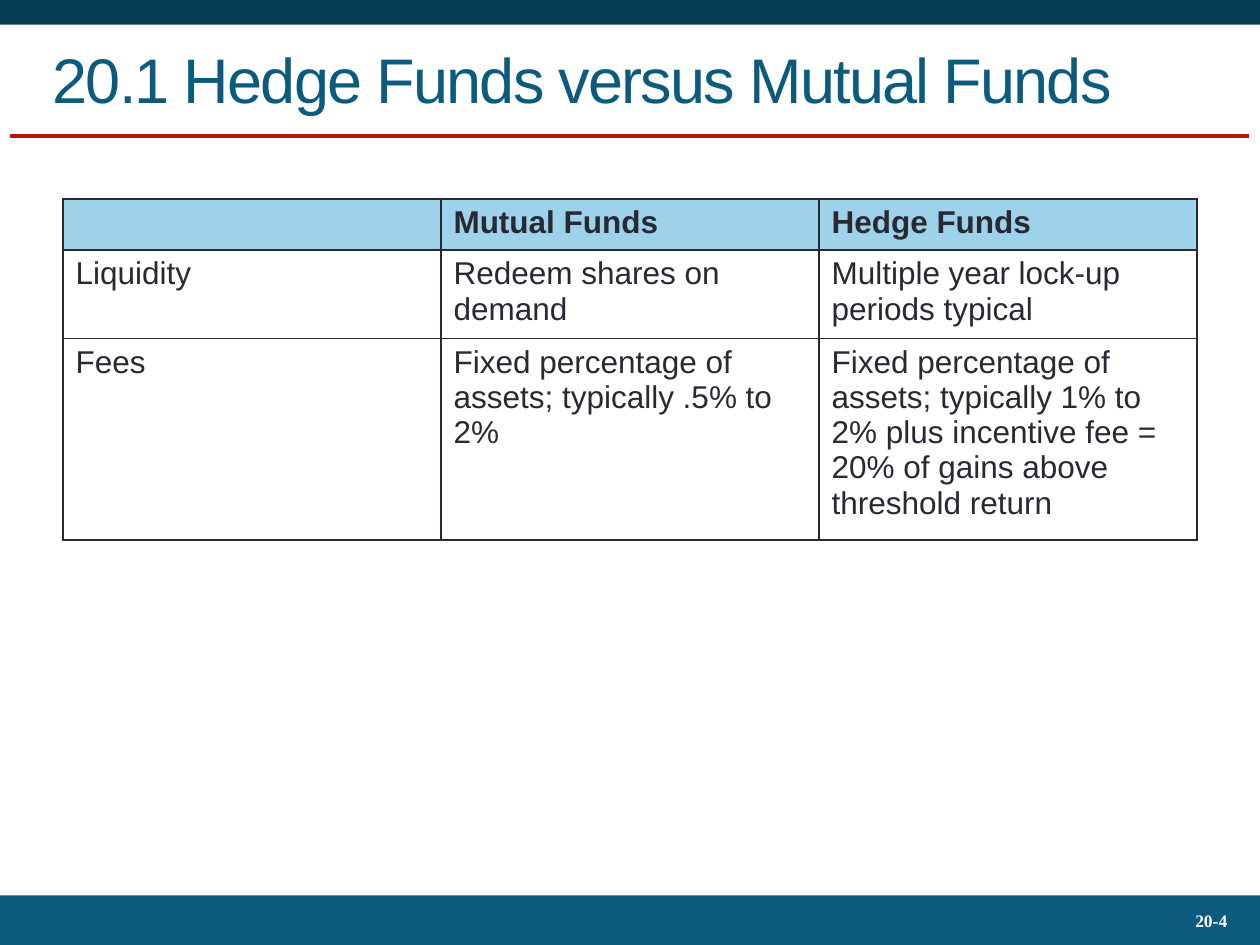
from dataclasses import dataclass

from lxml.etree import SubElement
from pptx import Presentation
from pptx.dml.color import RGBColor
from pptx.enum.shapes import MSO_CONNECTOR as Connector, MSO_SHAPE as Preset
from pptx.enum.text import MSO_ANCHOR as Anchor, PP_ALIGN as Align
from pptx.oxml.ns import qn
from pptx.util import Cm, Pt

WIDTH, HEIGHT = 25.4, 19.05


@dataclass(frozen=True)
class Theme:
    navy: str = "073D55"
    teal: str = "0B5B7F"
    red: str = "BD130F"
    sky: str = "9ED1EA"
    ink: str = "292934"
    white: str = "FFFFFF"
    sans: str = "Arial"
    serif: str = "Times New Roman"
    title_size: float = 36
    table_size: float = 18
    number_size: float = 10


class PageBuilder:
    def __init__(self, page, theme):
        self.page = page
        self.theme = theme

    def style(self, para, size, color, font, bold=False, spacing=None):
        for span in para.runs:
            span.font.size = Pt(size)
            span.font.name = font
            span.font.bold = bold
            span.font.color.rgb = RGBColor.from_string(color)
            if spacing is not None:
                span._r.get_or_add_rPr().set("spc", str(int(spacing * 100)))

    def band(self, top, height, color):
        bar = self.page.shapes.add_shape(
            Preset.RECTANGLE, 0, Cm(top), Cm(WIDTH), Cm(height))
        bar.shadow.inherit = False
        bar.fill.solid()
        bar.fill.fore_color.rgb = RGBColor.from_string(color)
        bar.line.fill.background()

    def rule(self, left, right, y, color, weight):
        line = self.page.shapes.add_connector(
            Connector.STRAIGHT, Cm(left), Cm(y), Cm(right), Cm(y))
        line.line.color.rgb = RGBColor.from_string(color)
        line.line.width = Pt(weight)
        SubElement(line._element.spPr, qn("a:effectLst"))

    def text(self, words, left, top, width, height, align=Align.LEFT, **look):
        box = self.page.shapes.add_textbox(
            Cm(left), Cm(top), Cm(width), Cm(height))
        frame = box.text_frame
        frame.word_wrap = True
        frame.vertical_anchor = Anchor.MIDDLE
        frame.text = words
        para = frame.paragraphs[0]
        para.alignment = align
        self.style(para, **look)

    def cell_border(self, cell, color, weight):
        props = cell._tc.get_or_add_tcPr()
        for side in ("a:lnL", "a:lnR", "a:lnT", "a:lnB"):
            edge = SubElement(props, qn(side), w=str(Pt(weight)))
            fill = SubElement(edge, qn("a:solidFill"))
            SubElement(fill, qn("a:srgbClr"), val=color)

    def table(self, rows, left, top, column_width, row_heights):
        theme = self.theme
        columns = len(rows[0])
        grid = self.page.shapes.add_table(
            len(rows), columns, Cm(left), Cm(top),
            Cm(column_width * columns), Cm(sum(row_heights))).table
        grid.horz_banding = False
        for column in grid.columns:
            column.width = Cm(column_width)
        for r, (words, height) in enumerate(zip(rows, row_heights)):
            grid.rows[r].height = Cm(height)
            for c, word in enumerate(words):
                cell = grid.cell(r, c)
                cell.text = word
                self.style(cell.text_frame.paragraphs[0], theme.table_size,
                           theme.ink, theme.sans, bold=r == 0)
                self.cell_border(cell, theme.ink, 1)
                if r == 0:
                    cell.fill.solid()
                    cell.fill.fore_color.rgb = RGBColor.from_string(theme.sky)
                else:
                    cell.fill.background()


def main():
    theme = Theme()
    deck = Presentation()
    deck.slide_width, deck.slide_height = Cm(WIDTH), Cm(HEIGHT)
    builder = PageBuilder(deck.slides.add_slide(deck.slide_layouts[6]), theme)

    # Page frame
    builder.band(0, 0.5, theme.navy)
    builder.rule(0.2, 25.18, 2.74, theme.red, 2.25)
    builder.band(18.05, 1, theme.teal)
    builder.text("20-4", 22.02, 18.11, 2.97, 0.91, Align.RIGHT,
                 size=theme.number_size, color=theme.white,
                 font=theme.serif, bold=True)

    # Title
    builder.text("20.1 Hedge Funds versus Mutual Funds",
                 0.81, 0.43, 23.8, 2.31, size=theme.title_size,
                 color=theme.teal, font=theme.sans, spacing=-1)

    # Fund comparison
    builder.table([
        ("", "Mutual Funds", "Hedge Funds"),
        ("Liquidity", "Redeem shares on demand",
         "Multiple year lock-up periods typical"),
        ("Fees", "Fixed percentage of assets; typically .5% to 2%",
         "Fixed percentage of assets; typically 1% to 2% plus "
         "incentive fee = 20% of gains above threshold return"),
    ], 1.27, 4.01, 7.62, (1.03, 1.68, 3.81))

    deck.save("out.pptx")


if __name__ == "__main__":
    main()
